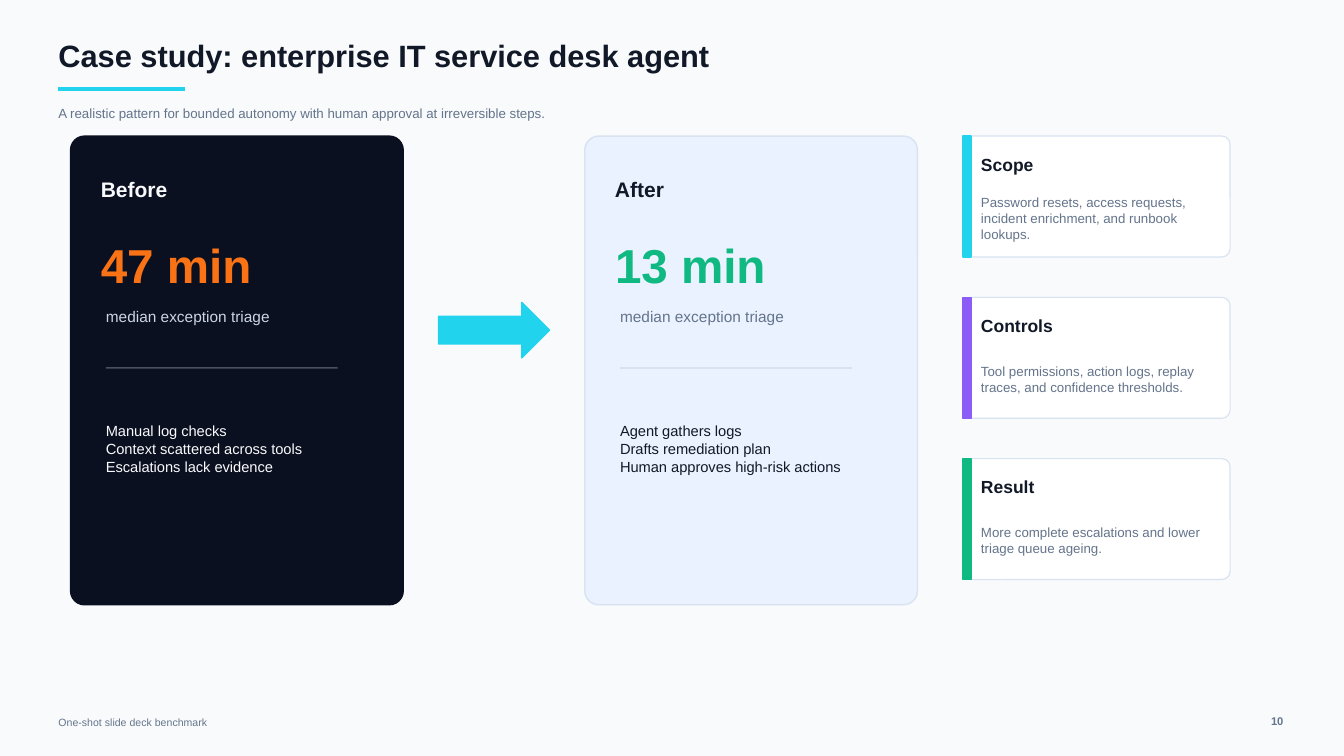
from dataclasses import dataclass

from lxml import etree
from pptx import Presentation
from pptx.dml.color import RGBColor
from pptx.enum.shapes import MSO_CONNECTOR, MSO_SHAPE
from pptx.enum.text import MSO_ANCHOR, MSO_AUTO_SIZE, PP_ALIGN
from pptx.oxml.ns import qn
from pptx.util import Inches, Pt

STRAIGHT = MSO_CONNECTOR.STRAIGHT
RECTANGLE = MSO_SHAPE.RECTANGLE
ROUNDED = MSO_SHAPE.ROUNDED_RECTANGLE
ARROW = MSO_SHAPE.RIGHT_ARROW
MIDDLE = MSO_ANCHOR.MIDDLE
NO_FIT = MSO_AUTO_SIZE.NONE
LEFT, RIGHT = PP_ALIGN.LEFT, PP_ALIGN.RIGHT
TWO_CONTENT_LAYOUT = 3


@dataclass(frozen=True)
class Theme:
    font: str = "Arial"
    background: str = "F8FAFC"
    ink: str = "111827"
    muted: str = "64748B"
    light: str = "F8FAFC"
    silver: str = "CBD5E1"
    dark: str = "0B1020"
    ice: str = "EAF2FF"
    white: str = "FFFFFF"
    rule: str = "D8E2F0"
    cyan: str = "22D3EE"
    violet: str = "8B5CF6"
    green: str = "10B981"
    orange: str = "F97316"
    title_size: float = 22
    metric_size: float = 34
    heading_size: float = 15
    card_size: float = 12.5
    caption_size: float = 11
    list_size: float = 10.5
    small_size: float = 9.5
    footer_size: float = 7.5
    number_size: float = 8


THEME = Theme()


def rgb(color):
    return RGBColor.from_string(color)


def fill_text(box, lines, size, color, bold=False, align=LEFT):
    """Write one unbulleted paragraph per line in a box without insets."""
    frame = box.text_frame
    frame.word_wrap = True
    frame.auto_size = NO_FIT
    frame.vertical_anchor = MIDDLE
    frame.margin_left = frame.margin_right = 0
    frame.margin_top = frame.margin_bottom = 0
    for index, line in enumerate(lines):
        para = frame.add_paragraph() if index else frame.paragraphs[0]
        para.alignment = align
        para.space_before = Pt(0)
        if box.is_placeholder:
            properties = para._p.get_or_add_pPr()
            properties.set("marL", "0")
            properties.set("indent", "0")
            etree.SubElement(properties, qn("a:buNone"))
        span = para.add_run()
        span.text = line
        span.font.name = THEME.font
        span.font.size = Pt(size)
        span.font.bold = bold
        span.font.color.rgb = rgb(color)


def add_text(page, left, top, width, height, text, size, color, **style):
    box = page.shapes.add_textbox(Inches(left), Inches(top), Inches(width), Inches(height))
    fill_text(box, [text], size, color, **style)


def place_text(holder, left, top, width, height, lines, size, color, **style):
    """Move a placeholder to its place, in front of what is drawn so far."""
    holder.left, holder.top = Inches(left), Inches(top)
    holder.width, holder.height = Inches(width), Inches(height)
    holder.element.getparent().append(holder.element)
    fill_text(holder, lines, size, color, **style)


def add_block(page, kind, left, top, width, height, fill, line, weight=1.0, corner=None):
    block = page.shapes.add_shape(kind, Inches(left), Inches(top), Inches(width), Inches(height))
    block.shadow.inherit = False
    block.fill.solid()
    block.fill.fore_color.rgb = rgb(fill)
    block.line.color.rgb = rgb(line)
    block.line.width = Pt(weight)
    if corner:
        block.adjustments[0] = corner


def add_rule(page, left, top, width, color, weight, opacity=100):
    rule = page.shapes.add_connector(
        STRAIGHT, Inches(left), Inches(top), Inches(left + width), Inches(top))
    rule.line.color.rgb = rgb(color)
    rule.line.width = Pt(weight)
    properties = rule.element.spPr
    etree.SubElement(properties, qn("a:effectLst"))
    if opacity < 100:
        tint = properties.find(".//" + qn("a:srgbClr"))
        etree.SubElement(tint, qn("a:alpha")).set("val", str(opacity * 1000))


def add_panel(page, holder, left, heading, metric, lines, fill, border,
              text_color, metric_color, caption_color, rule_opacity):
    add_block(page, ROUNDED, left, 1.35, 3.3, 4.65, fill, border, corner=0.042)
    add_text(page, left + 0.3, 1.75, 1.2, 0.25, heading,
             THEME.heading_size, text_color, bold=True)
    add_text(page, left + 0.3, 2.35, 2.45, 0.55, metric,
             THEME.metric_size, metric_color, bold=True)
    add_text(page, left + 0.35, 3, 2.3, 0.28, "median exception triage",
             THEME.caption_size, caption_color)
    add_rule(page, left + 0.35, 3.65, 2.3, THEME.rule, 1, rule_opacity)
    place_text(holder, left + 0.35, 3.95, 2.35, 1, lines, THEME.list_size, text_color)


def add_card(page, top, heading, text, accent):
    left, height = 9.55, 1.2
    add_block(page, ROUNDED, left, top, 2.65, height, THEME.white, THEME.rule, 0.8, 0.067)
    add_block(page, RECTANGLE, left, top, 0.08, height, accent, accent)
    add_text(page, left + 0.18, top + 0.14, 2.33, 0.28, heading,
             THEME.card_size, THEME.ink, bold=True)
    add_text(page, left + 0.18, top + 0.52, 2.33, 0.58, text, THEME.small_size, THEME.muted)


def main():
    deck = Presentation()
    deck.slide_width, deck.slide_height = Inches(13.33), Inches(7.5)
    page = deck.slides.add_slide(deck.slide_layouts[TWO_CONTENT_LAYOUT])
    page.background.fill.solid()
    page.background.fill.fore_color.rgb = rgb(THEME.background)
    title, before_list, after_list = page.placeholders

    place_text(title, 0.58, 0.35, 8.8, 0.4, ["Case study: enterprise IT service desk agent"],
               THEME.title_size, THEME.ink, bold=True)
    add_rule(page, 0.58, 0.88, 1.25, THEME.cyan, 3)
    add_text(page, 0.58, 0.98, 8.5, 0.28,
             "A realistic pattern for bounded autonomy with human approval at irreversible steps.",
             THEME.small_size, THEME.muted)

    add_panel(page, before_list, 0.7, "Before", "47 min",
              ["Manual log checks", "Context scattered across tools",
               "Escalations lack evidence"],
              THEME.dark, THEME.dark, THEME.light, THEME.orange, THEME.silver, 30)
    add_block(page, ARROW, 4.35, 3, 1.1, 0.55, THEME.cyan, THEME.cyan)
    add_panel(page, after_list, 5.8, "After", "13 min",
              ["Agent gathers logs", "Drafts remediation plan",
               "Human approves high-risk actions"],
              THEME.ice, THEME.rule, THEME.ink, THEME.green, THEME.muted, 100)

    cards = [
        ("Scope", "Password resets, access requests, incident enrichment, and runbook lookups.",
         THEME.cyan),
        ("Controls", "Tool permissions, action logs, replay traces, and confidence thresholds.",
         THEME.violet),
        ("Result", "More complete escalations and lower triage queue ageing.", THEME.green),
    ]
    for index, card in enumerate(cards):
        add_card(page, 1.35 + 1.6 * index, *card)

    add_text(page, 0.58, 7.08, 3.1, 0.18, "One-shot slide deck benchmark",
             THEME.footer_size, THEME.muted)
    add_text(page, 12.08, 7.05, 0.65, 0.2, "10", THEME.number_size, THEME.muted,
             bold=True, align=RIGHT)
    deck.save("out.pptx")


if __name__ == "__main__":
    main()
